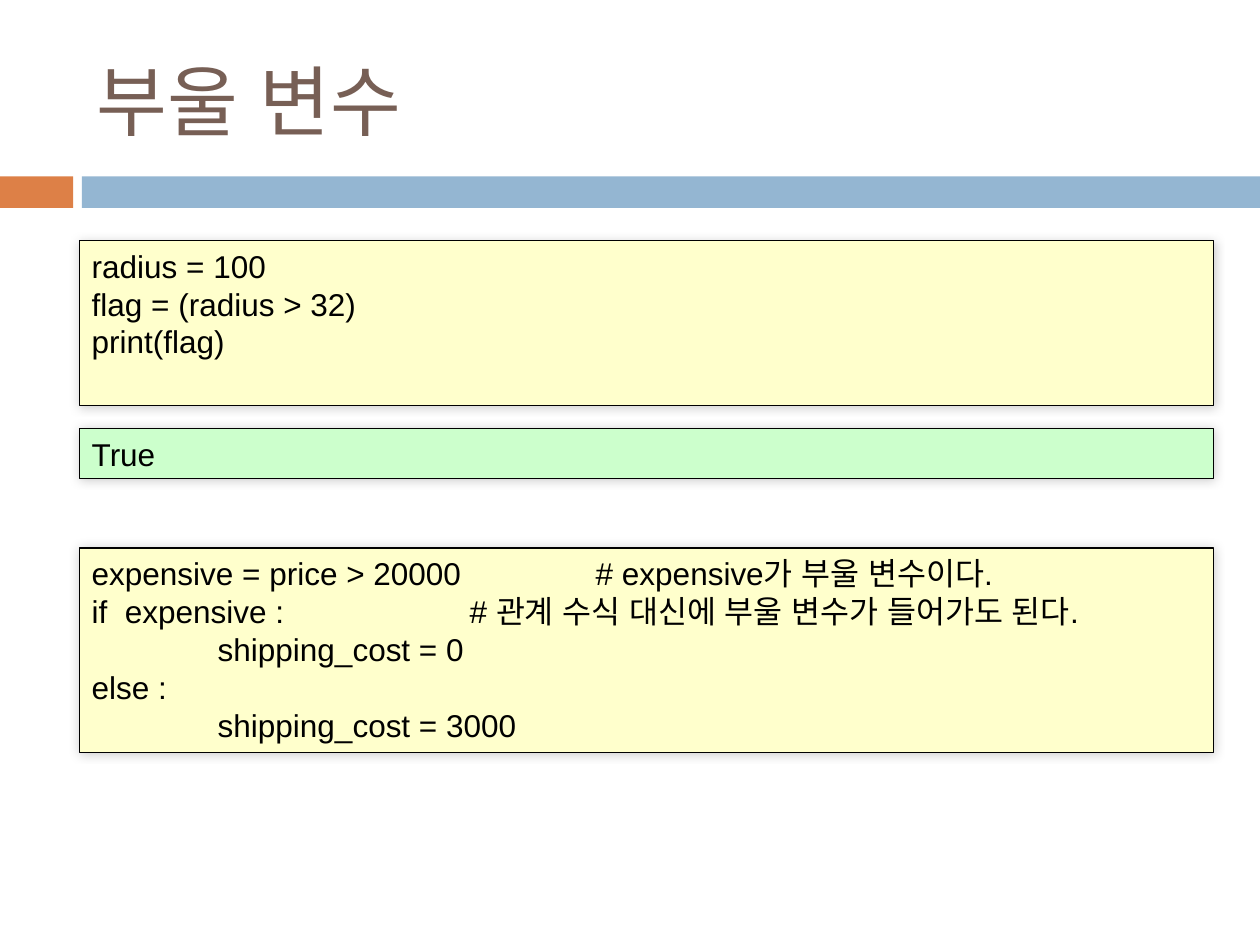
from dataclasses import dataclass

from lxml import etree
from pptx import Presentation
from pptx.dml.color import RGBColor
from pptx.enum.shapes import MSO_SHAPE
from pptx.enum.text import MSO_ANCHOR, PP_ALIGN
from pptx.oxml.ns import qn
from pptx.util import Inches, Pt

RECTANGLE = MSO_SHAPE.RECTANGLE
TOP, MIDDLE = MSO_ANCHOR.TOP, MSO_ANCHOR.MIDDLE
LEFT = PP_ALIGN.LEFT


@dataclass(frozen=True)
class Theme:
    """Colours, fonts and type sizes of the slide."""

    title: str = "775F55"
    accent: str = "DD8047"
    band: str = "94B6D2"
    code: str = "FFFFCC"
    output: str = "CCFFCC"
    ink: str = "000000"
    title_font: str = "Calibri"
    code_font: str = "Arial"
    korean_font: str = "Arial"
    title_size: int = 44
    code_size: int = 18


THEME = Theme()

PANELS = [
    (1.91, 1.31, THEME.code, ["radius = 100", "flag = (radius > 32)", "print(flag)"]),
    (3.4, 0.4, THEME.output, ["True"]),
    (4.35, 1.62, THEME.code, [
        "expensive = price > 20000 \t# expensive가 부울 변수이다.",
        "if  expensive :\t\t# 관계 수식 대신에 부울 변수가 들어가도 된다.",
        "\tshipping_cost = 0",
        "else :",
        "\tshipping_cost = 3000",
    ]),
]


def write_lines(shape, lines, font, size, color, anchor):
    """Fill a shape with left-aligned lines in one text style and inch-wide tabs."""
    text_frame = shape.text_frame
    text_frame.word_wrap = True
    text_frame.vertical_anchor = anchor
    text_frame.text = "\n".join(lines)
    for paragraph in text_frame.paragraphs:
        paragraph.alignment = LEFT
        paragraph._p.get_or_add_pPr().set("defTabSz", str(Inches(1)))
        for run in paragraph.runs:
            run.font.size = Pt(size)
            run.font.color.rgb = RGBColor.from_string(color)
            run.font.name = font
            etree.SubElement(run._r.get_or_add_rPr(), qn("a:ea"),
                             typeface=THEME.korean_font)


def add_rectangle(slide, box, fill):
    """Add a borderless flat rectangle and return it."""
    shape = slide.shapes.add_shape(RECTANGLE, *map(Inches, box))
    shape.shadow.inherit = False
    shape.fill.solid()
    shape.fill.fore_color.rgb = RGBColor.from_string(fill)
    shape.line.fill.background()
    return shape


def add_soft_shadow(shape):
    """Give a shape a faint blurred shadow on all sides."""
    effects = shape.element.spPr.find(qn("a:effectLst"))
    shadow = etree.SubElement(
        effects, qn("a:outerShdw"), blurRad=str(Pt(6)), dist="0",
        dir=str(315 * 60000), algn="tl", rotWithShape="0")
    color = etree.SubElement(shadow, qn("a:srgbClr"), val=THEME.ink)
    etree.SubElement(color, qn("a:alpha"), val="20000")


def add_title(slide, box, title):
    """Place the slide title, centred vertically in its box."""
    shape = slide.shapes.add_textbox(*map(Inches, box))
    write_lines(shape, [title], THEME.title_font, THEME.title_size,
                THEME.title, MIDDLE)


def add_band(slide, box):
    """Draw the divider: a short accent block, a gap and a long bar."""
    left, top, width, height = box
    accent_width, bar_offset = 0.58, 0.65
    add_rectangle(slide, (left, top, accent_width, height), THEME.accent)
    add_rectangle(slide, (left + bar_offset, top, width - bar_offset, height),
                  THEME.band)


def add_panel(slide, box, fill, lines):
    """Place an outlined panel of code or program output."""
    shape = add_rectangle(slide, box, fill)
    shape.line.color.rgb = RGBColor.from_string(THEME.ink)
    shape.line.width = Pt(0.75)
    add_soft_shadow(shape)
    write_lines(shape, lines, THEME.code_font, THEME.code_size, THEME.ink, TOP)


def main():
    """Build the slide and save it."""
    presentation = Presentation()
    presentation.slide_width = Inches(10)
    presentation.slide_height = Inches(7.5)
    slide = presentation.slides.add_slide(presentation.slide_layouts[6])
    add_band(slide, (0, 1.4, 10, 0.25))
    add_title(slide, (0.67, 0.25, 8.92, 1.08), "부울 변수")
    for top, height, fill, lines in PANELS:
        add_panel(slide, (0.63, top, 9, height), fill, lines)
    presentation.save("out.pptx")


if __name__ == "__main__":
    main()
